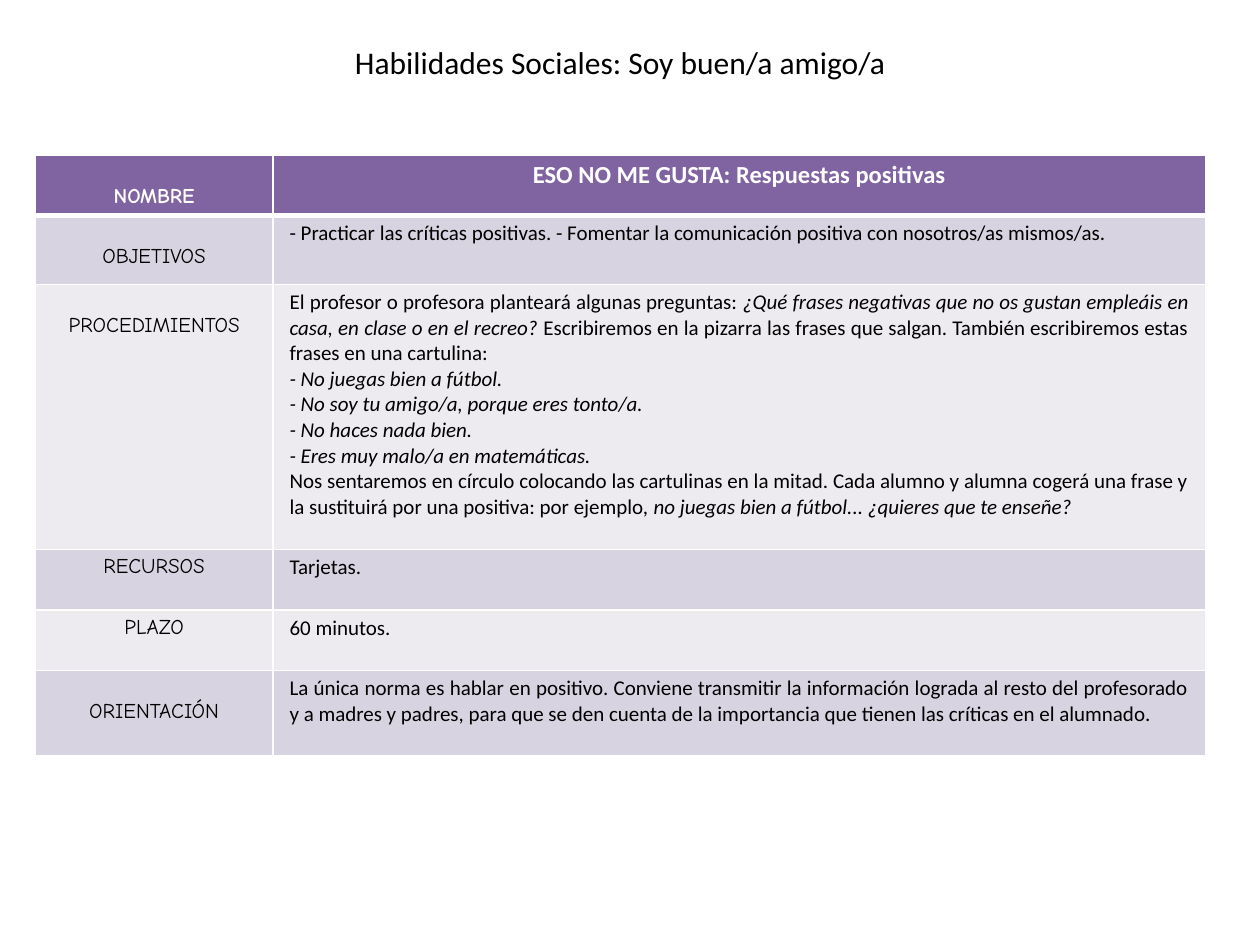
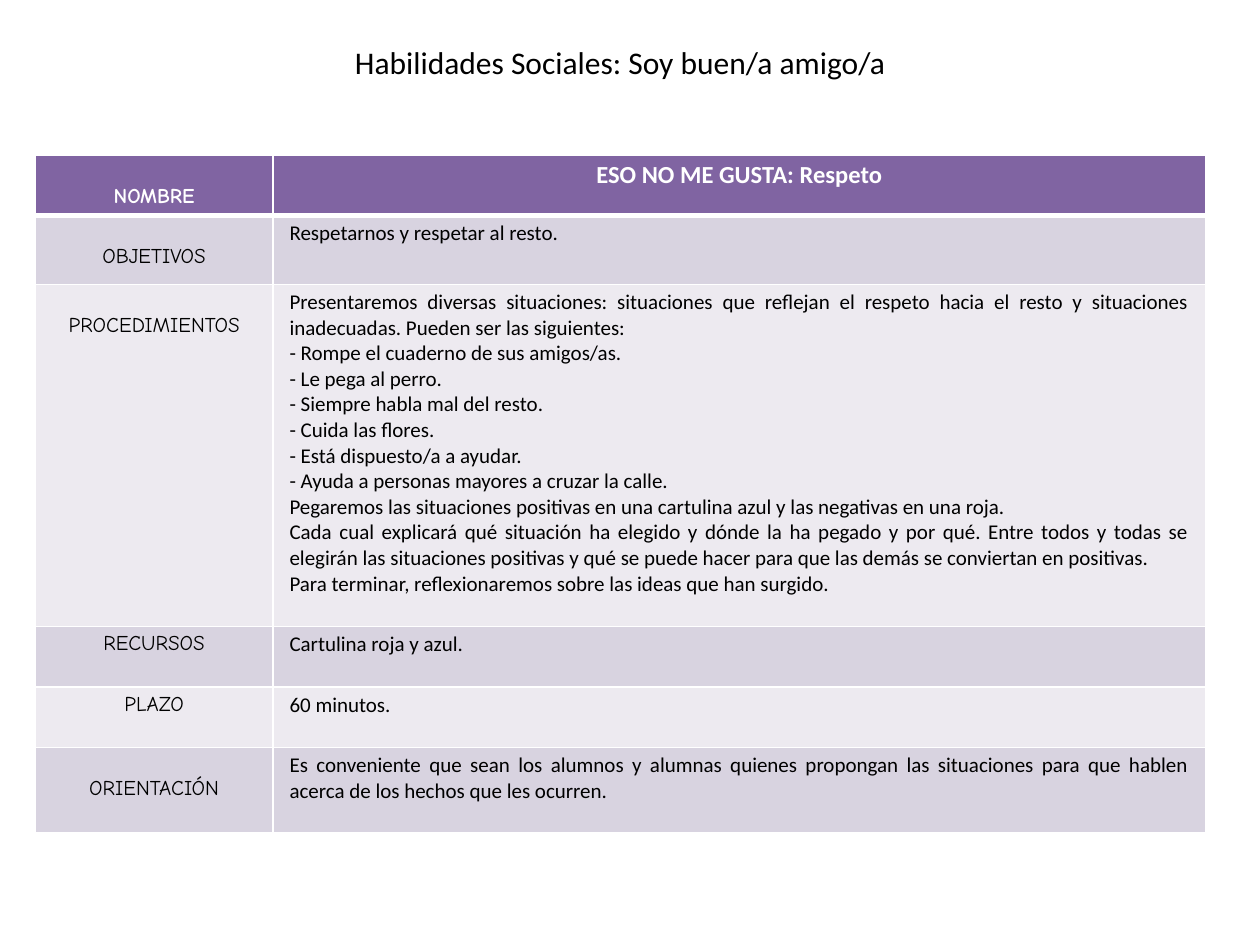
import dataclasses

import lxml.etree
import pptx
import pptx.dml.color
import pptx.enum.text
import pptx.oxml.ns
import pptx.util

Pt = pptx.util.Pt
RGB = pptx.dml.color.RGBColor.from_string
ALIGN = pptx.enum.text.PP_ALIGN


@dataclasses.dataclass(frozen=True)
class Theme:
    """Colours, fonts and type sizes of the activity sheets."""
    header: str = "8064A2"
    bands: tuple = ("EDEAF0", "D8D3E0")
    rule: str = "FFFFFF"
    light: str = "FFFFFF"
    dark: str = "000000"
    body_font: str = "Calibri"
    label_font: str = "Comic Neue"
    title_size: float = 18
    name_size: float = 14
    text_size: float = 12
    thin: float = 1
    thick: float = 3


THEME = Theme()
TITLE = "Habilidades Sociales: Soy buen/a amigo/a"
TITLE_BOX = (195.8, 20.9, 345.6, 28.8)
TABLE_BOX = (20.1, 88.6, 668.8)
LABEL_WIDTH = 136
MARGINS = {"margin_left": 9.4, "margin_top": 3, "margin_right": 9.4, "margin_bottom": 3}
LABEL_DROP = 13.8
LABELS = [
    ("NOMBRE", LABEL_DROP),
    ("OBJETIVOS", LABEL_DROP),
    ("PROCEDIMIENTOS", LABEL_DROP),
    ("RECURSOS", 0),
    ("PLAZO", 0),
    ("ORIENTACIÓN", LABEL_DROP),
]

ACTIVITIES = [
    {
        "heights": (34.5, 39.4, 151.4, 34.7, 34.7, 48.8),
        "contents": [
            ["ESO NO ME GUSTA: Respuestas positivas"],
            ["- Practicar las críticas positivas. - Fomentar la comunicación positiva "
             "con nosotros/as mismos/as."],
            ["El profesor o profesora planteará algunas preguntas: *¿Qué frases negativas "
             "que no os gustan empleáis en casa, en clase o en el recreo? *Escribiremos en "
             "la pizarra las frases que salgan. También escribiremos estas frases en una "
             "cartulina:",
             "*- No juegas bien a fútbol.",
             "*- No soy tu amigo/a, porque eres tonto/a.",
             "*- No haces nada bien.",
             "*- Eres muy malo/a en matemáticas.",
             "Nos sentaremos en círculo colocando las cartulinas en la mitad. Cada alumno y "
             "alumna cogerá una frase y la sustituirá por una positiva: por ejemplo, "
             "*no juegas bien a fútbol... ¿quieres que te enseñe?"],
            ["Tarjetas."],
            ["60 minutos."],
            ["La única norma es hablar en positivo. Conviene transmitir la información "
             "lograda al resto del profesorado y a madres y padres, para que se den cuenta "
             "de la importancia que tienen las críticas en el alumnado."],
        ],
    },
    {
        "heights": (34.5, 39.4, 195.4, 34.7, 34.7, 48.8),
        "contents": [
            ["ESO NO ME GUSTA: Respeto"],
            ["Respetarnos y respetar al resto."],
            ["Presentaremos diversas situaciones: situaciones que reflejan el respeto hacia "
             "el resto y situaciones inadecuadas. Pueden ser las siguientes:",
             "- Rompe el cuaderno de sus amigos/as.",
             "- Le pega al perro.",
             "- Siempre habla mal del resto.",
             "- Cuida las flores.",
             "- Está dispuesto/a a ayudar.",
             "- Ayuda a personas mayores a cruzar la calle.",
             "Pegaremos las situaciones positivas en una cartulina azul y las negativas en "
             "una roja.",
             "Cada cual explicará qué situación ha elegido y dónde la ha pegado y por qué. "
             "Entre todos y todas se elegirán las situaciones positivas y qué se puede hacer "
             "para que las demás se conviertan en positivas.",
             "Para terminar, reflexionaremos sobre las ideas que han surgido."],
            ["Cartulina roja y azul."],
            ["60 minutos."],
            ["Es conveniente que sean los alumnos y alumnas quienes propongan las "
             "situaciones para que hablen acerca de los hechos que les ocurren."],
        ],
    },
]


def write(tf, paragraphs, align, color, **font):
    """Write paragraphs into a text frame; asterisks switch italics on and off."""
    for i, text in enumerate(paragraphs):
        p = tf.paragraphs[0] if i == 0 else tf.add_paragraph()
        p.alignment = align
        for j, part in enumerate(text.split("*")):
            if part:
                r = p.add_run()
                r.text = part
                for key, value in {**font, "italic": j % 2 == 1}.items():
                    setattr(r.font, key, value)
                r.font.color.rgb = RGB(color)


def add_borders(cell, widths):
    """Rule the sides of a cell, given a width for each side."""
    tc_pr = cell._tc.get_or_add_tcPr()
    for side, width in widths.items():
        ln = lxml.etree.SubElement(tc_pr, pptx.oxml.ns.qn(f"a:ln{side}"), w=str(Pt(width)))
        fill = lxml.etree.SubElement(ln, pptx.oxml.ns.qn("a:solidFill"))
        lxml.etree.SubElement(fill, pptx.oxml.ns.qn("a:srgbClr"), val=THEME.rule)


def style_cell(cell, row, drop=0):
    """Give a cell its margins, rules and the fill of its row."""
    for key, value in MARGINS.items():
        setattr(cell, key, Pt(value))
    cell.margin_top = Pt(MARGINS["margin_top"] + drop)
    add_borders(cell, {
        "L": THEME.thin,
        "R": THEME.thin,
        "T": THEME.thick if row == 1 else THEME.thin,
        "B": THEME.thick if row == 0 else THEME.thin,
    })
    cell.fill.solid()
    cell.fill.fore_color.rgb = RGB(THEME.bands[row % 2] if row else THEME.header)


def add_title(s, box):
    """Add the heading of the sheet in the given box."""
    tf = s.shapes.add_textbox(*map(Pt, box)).text_frame
    tf.word_wrap = True
    tf.auto_size = pptx.enum.text.MSO_AUTO_SIZE.SHAPE_TO_FIT_TEXT
    write(tf, [TITLE], ALIGN.LEFT, THEME.dark,
          name=THEME.body_font, size=Pt(THEME.title_size))


def add_activity_table(s, box, heights, contents):
    """Add the table that describes one activity at the given left, top and width."""
    left, top, width = box
    table = s.shapes.add_table(len(LABELS), 2, Pt(left), Pt(top), Pt(width),
                               Pt(sum(heights))).table
    table.first_row = table.horz_banding = False
    table.columns[0].width = Pt(LABEL_WIDTH)
    table.columns[1].width = Pt(width - LABEL_WIDTH)
    for row, ((label, drop), height, content) in enumerate(zip(LABELS, heights, contents)):
        table.rows[row].height = Pt(height)
        head = row == 0
        color = THEME.light if head else THEME.dark
        label_cell, content_cell = table.cell(row, 0), table.cell(row, 1)
        style_cell(label_cell, row, drop)
        write(label_cell.text_frame, [label], ALIGN.CENTER, color,
              name=THEME.label_font, size=Pt(THEME.text_size), bold=head)
        style_cell(content_cell, row)
        write(content_cell.text_frame, content, ALIGN.CENTER if head else ALIGN.JUSTIFY,
              color, name=THEME.body_font, bold=head,
              size=Pt(THEME.name_size if head else THEME.text_size))


def add_activity_slide(prs, activity):
    """Add one slide with the heading and an activity table."""
    s = prs.slides.add_slide(prs.slide_layouts[6])
    add_activity_table(s, TABLE_BOX, **activity)
    add_title(s, TITLE_BOX)


def main():
    """Build and save the presentation."""
    prs = pptx.Presentation()
    prs.slide_width, prs.slide_height = Pt(720), Pt(540)
    for activity in ACTIVITIES:
        add_activity_slide(prs, activity)
    prs.save("out.pptx")


if __name__ == "__main__":
    main()
